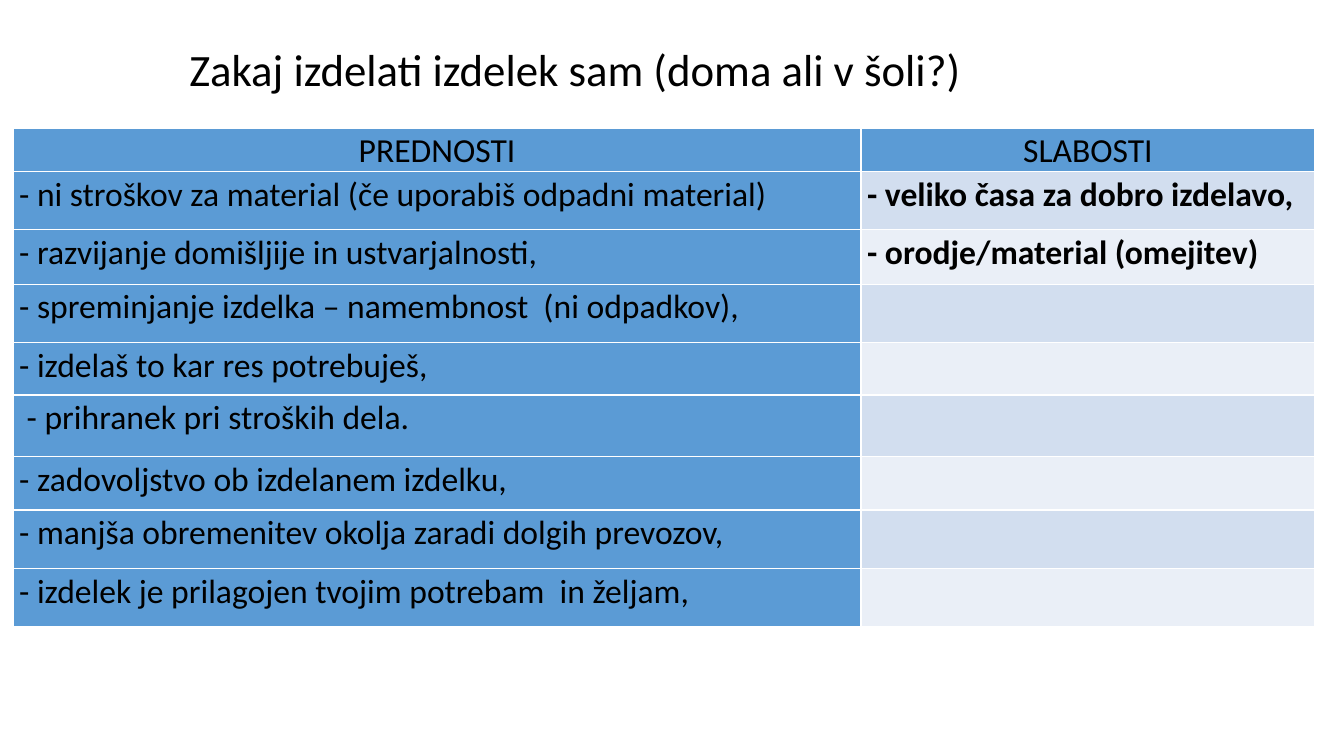
from dataclasses import dataclass
from itertools import zip_longest

from lxml.etree import SubElement
from pptx import Presentation
from pptx.dml.color import RGBColor as RGB
from pptx.enum.text import MSO_ANCHOR as Anchor, PP_ALIGN as Align
from pptx.oxml.ns import qn
from pptx.util import Inches, Pt


@dataclass(frozen=True)
class Theme:
    """Colours, font and type sizes of the slide."""
    font: str = "Calibri"
    title: int = 32
    body: int = 24
    ink: str = "000000"
    blue: str = "5B9BD5"
    bands: tuple = ("D2DEEF", "EAEFF7")
    rule: str = "FFFFFF"


THEME = Theme()
TITLE = "Zakaj izdelati izdelek sam (doma ali v šoli?)"
HEADS = ("PREDNOSTI", "SLABOSTI")
PROS = (
    "- ni stroškov za material (če uporabiš odpadni material)",
    "- razvijanje domišljije in ustvarjalnosti,",
    "- spreminjanje izdelka – namembnost  (ni odpadkov),",
    "- izdelaš to kar res potrebuješ,",
    " - prihranek pri stroških dela.",
    "- zadovoljstvo ob izdelanem izdelku,",
    "- manjša obremenitev okolja zaradi dolgih prevozov,",
    "- izdelek je prilagojen tvojim potrebam  in željam,",
)
CONS = ("- veliko časa za dobro izdelavo,", "- orodje/material (omejitev)")
WIDTHS = (8.41, 4.5)
HEIGHTS = (0.43, 0.58, 0.54, 0.58, 0.52, 0.61, 0.53, 0.58, 0.58)


def write(frame, text, size, lines, bold=False, align=Align.LEFT):
    """Fill a text frame with one styled paragraph."""
    para = frame.paragraphs[0]
    para.text = text
    para.alignment = align
    para.line_spacing = lines
    font = para.font
    font.name, font.size, font.bold = THEME.font, Pt(size), bold
    font.color.rgb = RGB.from_string(THEME.ink)


def add_title(slide):
    """Add the slide heading."""
    box = slide.shapes.add_textbox(Inches(1.78), Inches(0.3), Inches(9.61), Inches(0.7))
    frame = box.text_frame
    frame.word_wrap = True
    frame.vertical_anchor = Anchor.BOTTOM
    write(frame, TITLE, THEME.title, 0.9)


def add_rules(cell):
    """Draw thin lines on the four sides of a cell."""
    props = cell._tc.get_or_add_tcPr()
    for side in ("lnL", "lnR", "lnT", "lnB"):
        line = SubElement(props, qn(f"a:{side}"), w=str(Pt(1)))
        fill = SubElement(line, qn("a:solidFill"))
        SubElement(fill, qn("a:srgbClr"), val=THEME.rule)


def set_cell(cell, text, fill, bold, align):
    """Give a cell its lines, fill and text."""
    add_rules(cell)
    cell.fill.solid()
    cell.fill.fore_color.rgb = RGB.from_string(fill)
    cell.margin_left = cell.margin_right = Inches(0.06)
    cell.margin_top = cell.margin_bottom = 0
    write(cell.text_frame, text, THEME.body, 1.07, bold, align)


def add_grid(slide):
    """Add the table of pros and cons."""
    rows = [HEADS, *zip_longest(PROS, CONS, fillvalue="")]
    table = slide.shapes.add_table(
        len(rows), len(HEADS), Inches(0.13), Inches(1.27),
        Inches(sum(WIDTHS)), Inches(sum(HEIGHTS))).table
    table.first_row = table.horz_banding = False
    for col, width in zip(table.columns, WIDTHS):
        col.width = Inches(width)
    for row, height in zip(table.rows, HEIGHTS):
        row.height = Inches(height)
    for r, row in enumerate(rows):
        for c, text in enumerate(row):
            head, con = r == 0, c == 1
            banded = con and not head
            fill = THEME.bands[(r - 1) % 2] if banded else THEME.blue
            align = Align.CENTER if head else Align.LEFT
            set_cell(table.cell(r, c), text, fill, banded, align)


def main():
    """Build the slide and save it."""
    deck = Presentation()
    deck.slide_width, deck.slide_height = Inches(13.33), Inches(7.5)
    slide = deck.slides.add_slide(deck.slide_layouts[6])
    add_title(slide)
    add_grid(slide)
    deck.save("out.pptx")


if __name__ == "__main__":
    main()
